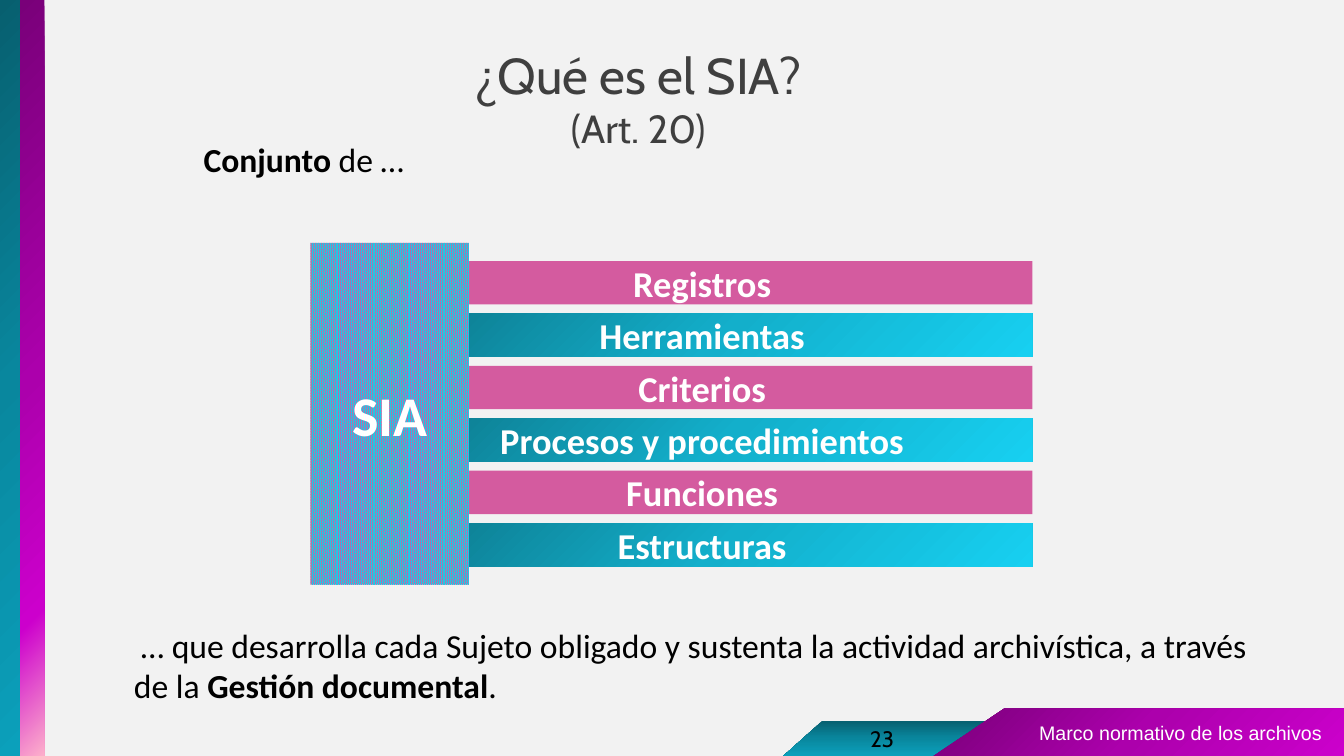
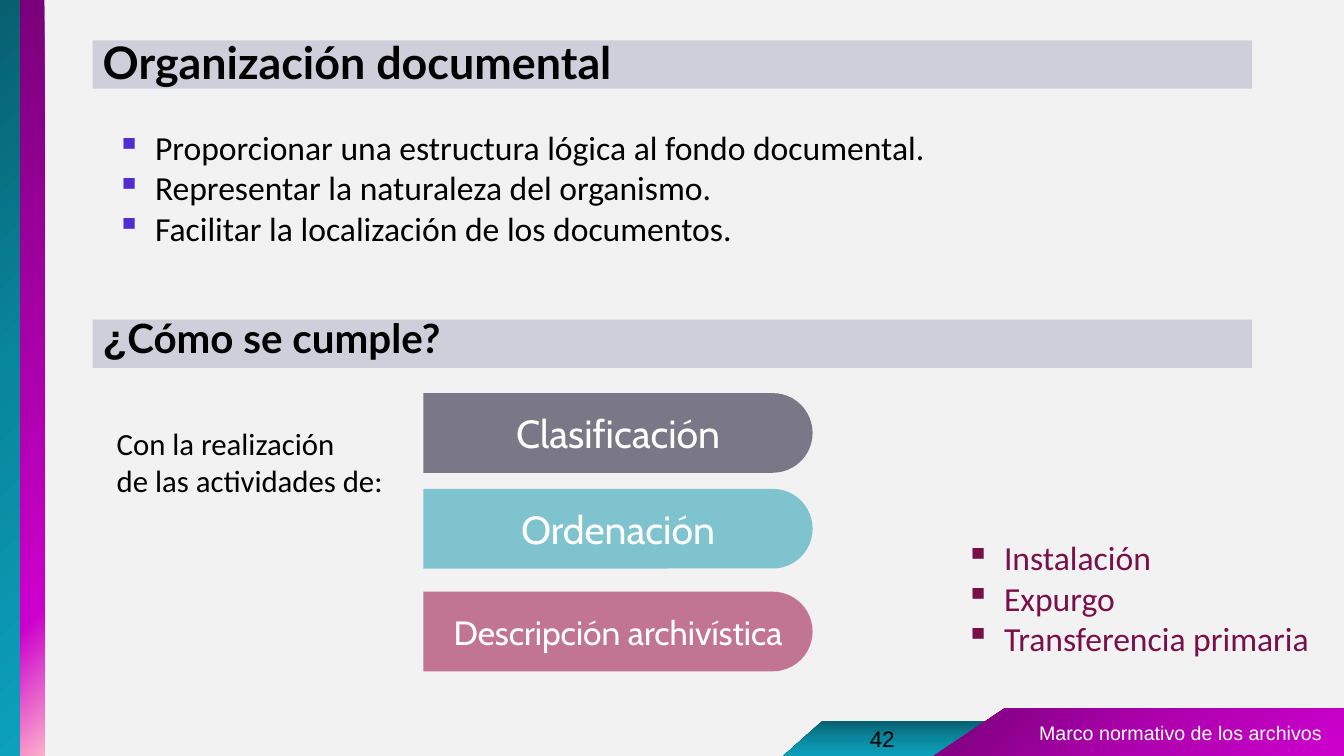
import math
from dataclasses import dataclass

import lxml.etree
import pptx
import pptx.dml.color
import pptx.enum.dml
import pptx.enum.shapes
import pptx.enum.text
import pptx.oxml.ns
import pptx.util

Inches = pptx.util.Inches
Align = pptx.enum.text.PP_ALIGN
Anchor = pptx.enum.text.MSO_ANCHOR
Kind = pptx.enum.shapes.MSO_SHAPE
qn = pptx.oxml.ns.qn


@dataclass(frozen=True)
class Theme:
    ground: str = "F2F2F2"
    white: str = "FFFFFF"
    black: str = "000000"
    gray: str = "3F3F3F"
    lilac: str = "CFCFDB"
    pink: str = "D45B9F"
    cyan: str = "25C6E3"
    violet: str = "502CD1"
    wine: str = "781049"
    night: str = "0D0725"
    sea: str = "1798AF"
    berry: str = "970337"
    teal: tuple = ((0, "075F6F"), (50, "09879E"), (100, "0BA0BB"))
    purple: tuple = ((0, "790079"), (50, "AC00AC"), (100, "CC00CC"))
    sunset: tuple = ((0, "790079"), (50, "AC00AC"), (81, "CC00CC"), (100, "FDB0CB"))
    aqua: tuple = ((0, "0D7B8F"), (50, "13AFCB"), (100, "17D0F1"))
    body: str = "Calibri"
    show: str = "Cabin"
    head: str = "Lato"
    plain: str = "Arial"
    small: float = 14
    page: float = 16
    note: float = 22
    text: float = 24
    row: float = 26
    label: float = 28
    ask: float = 28.8
    topic: float = 32
    title: float = 36
    huge: float = 40


T = Theme()
BODY = {"size": T.text, "name": T.body, "color": T.black}


def rgb(color):
    return pptx.dml.color.RGBColor.from_string(color)


def node(parent, tag, **attrs):
    child = lxml.etree.SubElement(parent, qn(tag))
    for key, val in attrs.items():
        child.set(key, str(val))
    return child


def paint(shape, fill, angle=45, alpha=None):
    """Fill with a colour or with gradient stops; angle runs clockwise."""
    shape.shadow.inherit = False
    shape.line.fill.background()
    if isinstance(fill, str):
        shape.fill.solid()
        shape.fill.fore_color.rgb = rgb(fill)
        if alpha:
            tone = next(shape.element.spPr.iter(qn("a:srgbClr")))
            node(tone, "a:alpha", val=alpha * 1000)
        return
    shape.fill.gradient()
    shape.fill.gradient_angle = 360 - angle
    stops = next(shape.element.spPr.iter(qn("a:gsLst")))
    for stop in list(stops):
        stops.remove(stop)
    for place, color in fill:
        node(node(stops, "a:gs", pos=place * 1000), "a:srgbClr", val=color)


def box(slide, at, fill, kind=Kind.RECTANGLE, angle=45):
    shape = slide.shapes.add_shape(kind, *map(Inches, at))
    paint(shape, fill, angle)
    return shape


def form(slide, points, fill, alpha=None):
    start, *rest = [(Inches(x), Inches(y)) for x, y in points]
    maker = slide.shapes.build_freeform(*start)
    maker.add_line_segments(rest, close=True)
    shape = maker.convert_to_shape()
    paint(shape, fill, alpha=alpha)
    return shape


def style(font, look):
    for key, val in look.items():
        if key == "color":
            font.color.rgb = rgb(val)
        else:
            setattr(font, key, pptx.util.Pt(val) if key == "size" else val)


def write(shape, lines, look, align=Align.LEFT, anchor=Anchor.MIDDLE, space=None):
    """Each line is a string or a list of (text, changes to the look)."""
    frame = shape.text_frame
    for key, val in {"word_wrap": True, "vertical_anchor": anchor}.items():
        setattr(frame, key, val)
    for i, line in enumerate(lines):
        para = frame.add_paragraph() if i else frame.paragraphs[0]
        for key, val in {"alignment": align, "line_spacing": space}.items():
            setattr(para, key, val)
        for words, extra in [(line, {})] if isinstance(line, str) else line:
            run = para.add_run()
            run.text = words
            style(run.font, {**look, **extra})
    return frame


def label(slide, at, lines, look, align=Align.LEFT):
    shape = slide.shapes.add_textbox(*map(Inches, at))
    return write(shape, lines, look, align, Anchor.TOP)


def indent(para, left, first):
    props = para._p.get_or_add_pPr()
    props.set("marL", str(Inches(left)))
    props.set("indent", str(Inches(first)))
    return props


def bullets(slide, at, lines, look, color):
    for para in label(slide, at, lines, look).paragraphs:
        props = indent(para, 0.38, -0.38)
        node(node(props, "a:buClr"), "a:srgbClr", val=color)
        node(props, "a:buChar", char="▪")


def banner(slide, top, line, size, space):
    shape = box(slide, (0.92, top, 11.5, 0.48), T.lilac)
    look = {"size": size, "name": T.head, "color": T.black, "bold": True}
    write(shape, [line], look, space=space)


def pill(slide, top, words, fill, size):
    """Bar with a half-round right end."""
    left, right, high = 4.2, 8.06, 0.79
    rad, steps = high / 2, 24
    turns = [math.pi * (i / steps - 0.5) for i in range(steps + 1)]
    arc = [(right - rad + rad * math.cos(a), top + rad + rad * math.sin(a))
           for a in turns]
    shape = form(slide, [(left, top), *arc, (left, top + high)], fill, 52)
    look = {"size": size, "name": T.show, "color": T.white}
    write(shape, [words], look, Align.CENTER)


def number(slide, words, font):
    look = {"size": T.page, "name": font, "color": T.black}
    label(slide, (7.25, 7.14, 3, 0.4), [words], look, Align.CENTER)


def master(deck, slide):
    """Draw the shared bands and footer, then move them to the master."""
    base = deck.slide_master
    base.background.fill.solid()
    base.background.fill.fore_color.rgb = rgb(T.ground)
    box(slide, (0, 0, 0.2, 7.5), T.teal)
    box(slide, (0.2, 0, 0.24, 7.5), T.sunset)
    tab = box(slide, (7.77, 7.15, 2.6, 0.35), T.teal, Kind.PARALLELOGRAM, 90)
    tab.adjustments[0] = 1.11
    form(slide, [(9.96, 7.03), (13.33, 7.03), (13.33, 7.5), (9.26, 7.5)], T.purple)
    look = {"size": T.small, "name": T.plain, "color": T.white}
    label(slide, (9.78, 7.1, 3.86, 0.34), ["Marco normativo de los archivos"],
          look, Align.CENTER)
    for i, shape in enumerate(list(slide.shapes), 100):
        next(shape.element.iter(qn("p:cNvPr"))).set("id", str(i))
        base.shapes.element.append(shape.element)


def system(slide):
    look = {"size": T.title, "name": T.show, "color": T.gray}
    label(slide, (0.68, 0.39, 11.3, 1.45),
          ["¿Qué es el SIA?", [("(Art. 20)", {"size": T.label})]], look, Align.CENTER)

    strong = {"name": T.body, "color": T.white, "bold": True}
    rows = ["Registros", "Herramientas", "Criterios",
            "Procesos y procedimientos", "Funciones", "Estructuras"]
    for i, words in enumerate(rows):
        bar = box(slide, (4.14, 2.59 + 0.52 * i, 6.1, 0.43), T.aqua if i % 2 else T.pink)
        frame = write(bar, [words], {**strong, "size": T.row}, Align.CENTER)
        gaps = {"left": 0, "right": 0.45, "top": 0, "bottom": 0}
        for side, gap in gaps.items():
            setattr(frame, "margin_" + side, Inches(gap))

    block = box(slide, (3.08, 2.41, 1.57, 3.39), T.cyan)
    block.fill.patterned()
    block.fill.pattern = pptx.enum.dml.MSO_PATTERN.PERCENT_90
    block.fill.fore_color.rgb = rgb(T.cyan)
    block.fill.back_color.rgb = rgb(T.pink)
    write(block, ["SIA"], {**strong, "size": T.huge}, Align.CENTER)

    label(slide, (1.92, 1.33, 10.42, 0.5),
          [[("Conjunto", {"bold": True}), (" de …", {})]], BODY)
    close = label(slide, (1.23, 6.15, 12.1, 0.91), [
        "… que desarrolla cada Sujeto obligado y sustenta la actividad archivística, a través",
        [("de la ", {}), ("Gestión documental", {"bold": True}), (".", {})]], BODY)
    indent(close.paragraphs[0], 0, 0.07)
    number(slide, "23", T.show)


def order(slide):
    banner(slide, 0.4, "Organización documental", T.topic, 0.9)
    bullets(slide, (1.06, 1.21, 11.9, 1.31), [
        "Proporcionar una estructura lógica al fondo documental.",
        "Representar la naturaleza del organismo.",
        "Facilitar la localización de los documentos."], BODY, T.violet)
    banner(slide, 3.17, [("¿", {"name": T.plain}), ("Cómo se cumple?", {})], T.ask, 0.7)
    label(slide, (1.06, 4.16, 3.1, 1.25),
          ["Con la realización", "de las actividades de:"], {**BODY, "size": T.note})
    for top, words, fill, size in [
            (3.9, "Clasificación", T.night, T.label),
            (4.85, "Ordenación", T.sea, T.label),
            (5.87, "Descripción archivística", T.berry, T.text)]:
        pill(slide, top, words, fill, size)
    bullets(slide, (9.48, 5.28, 3.85, 1.31),
            ["Instalación", "Expurgo", "Transferencia primaria"],
            {**BODY, "color": T.wine}, T.wine)
    number(slide, "42", T.plain)


def main():
    deck = pptx.Presentation()
    deck.slide_width, deck.slide_height = Inches(13.33), Inches(7.5)
    blank = deck.slide_layouts[6]
    first, second = [deck.slides.add_slide(blank) for _ in range(2)]
    master(deck, first)
    system(first)
    order(second)
    deck.save("out.pptx")


if __name__ == "__main__":
    main()
